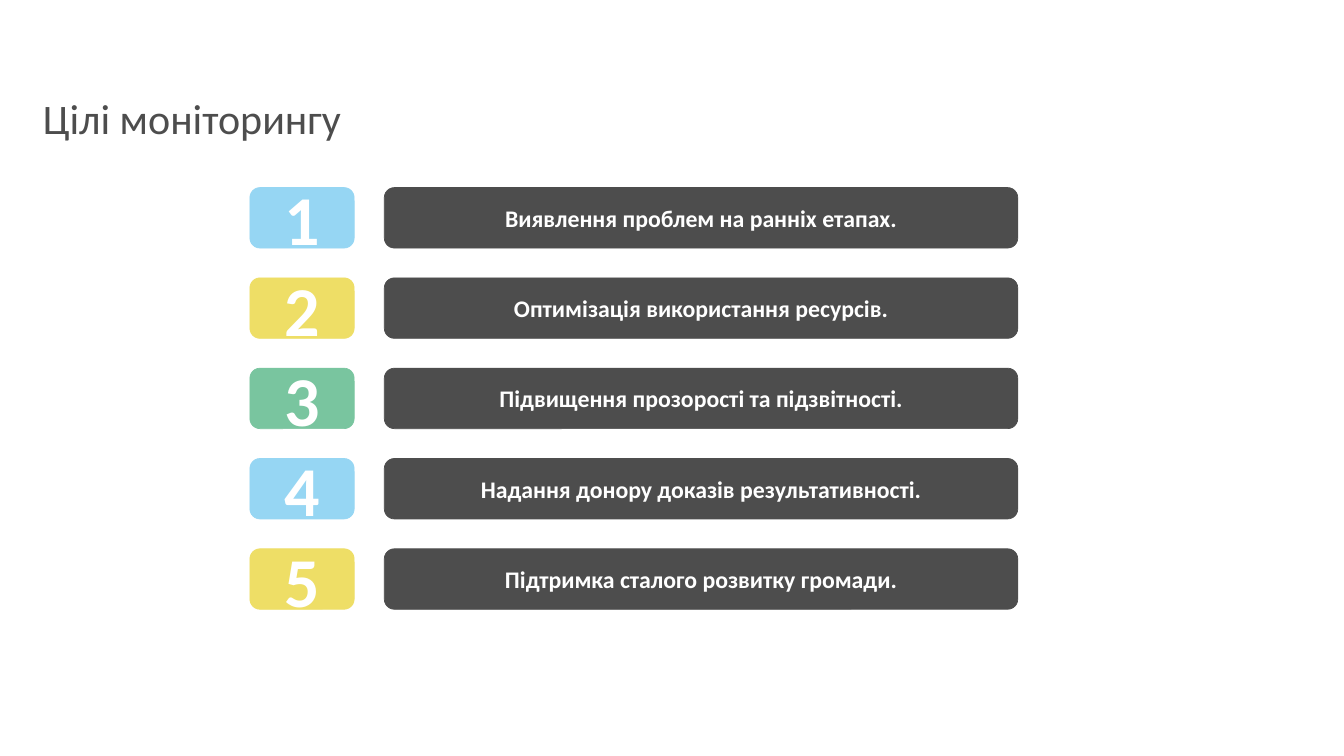
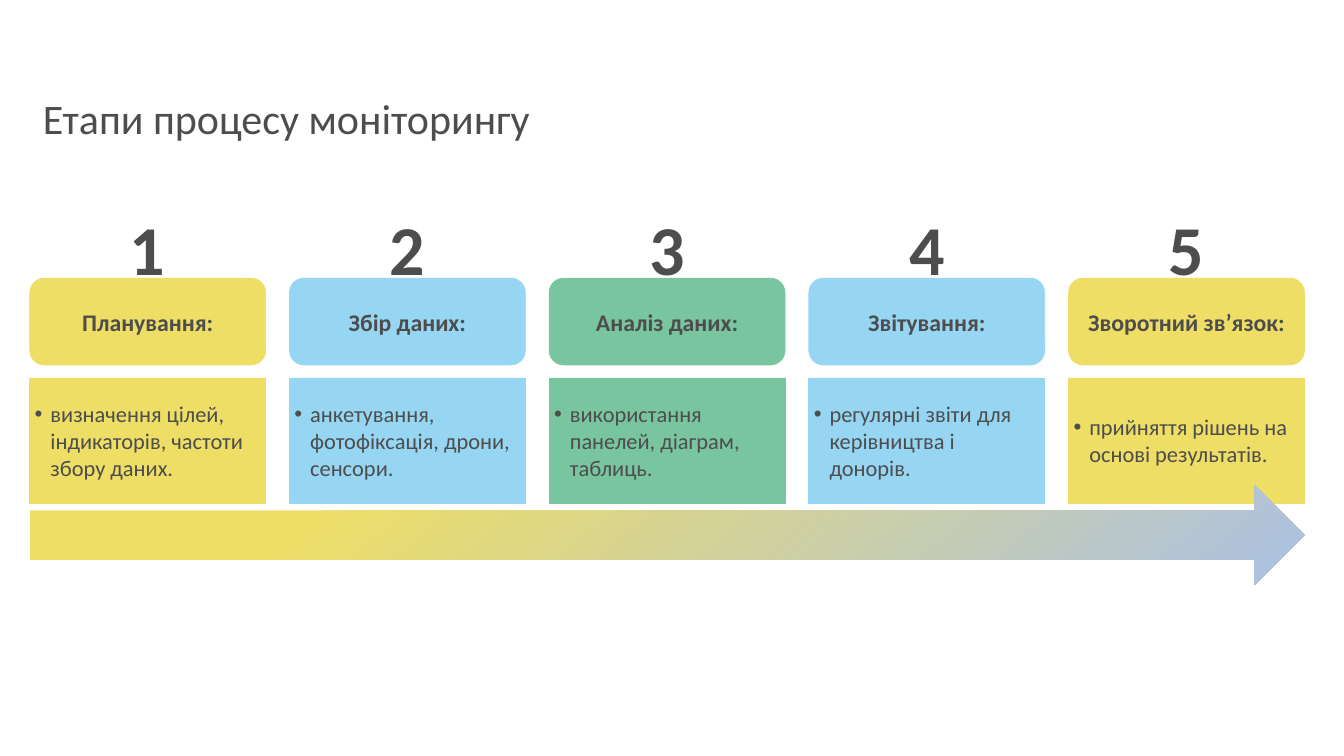
from pptx import Presentation
from pptx.dml.color import RGBColor
from pptx.enum.shapes import MSO_SHAPE as SHAPE
from pptx.enum.text import MSO_ANCHOR as ANCHOR, PP_ALIGN as ALIGN
from pptx.oxml.ns import qn
from pptx.util import Pt
from lxml.etree import SubElement

FONT = "Calibri"
DARK, WHITE = "4D4D4D", "FFFFFF"
BLUE, YELLOW, GREEN, LILAC = "96D6F3", "EEDE66", "79C59F", "ABC0E4"
SLIDE_W, SLIDE_H = 1920, 1080
BADGE_W, BADGE_H = 149, 86.4
BULLET_INDENT = 22.5

GOALS = [
    ("Виявлення проблем на ранніх етапах.", BLUE),
    ("Оптимізація використання ресурсів.", YELLOW),
    ("Підвищення прозорості та підзвітності.", GREEN),
    ("Надання донору доказів результативності.", BLUE),
    ("Підтримка сталого розвитку громади.", YELLOW),
]
STAGES = [
    ("Планування:", "визначення цілей, індикаторів, частоти збору даних.", YELLOW),
    ("Збір даних:", "анкетування, фотофіксація, дрони, сенсори.", BLUE),
    ("Аналіз даних:", "використання панелей, діаграм, таблиць.", GREEN),
    ("Звітування:", "регулярні звіти для керівництва і донорів.", BLUE),
    ("Зворотний зв’язок:", "прийняття рішень на основі результатів.", YELLOW),
]


def rgb(value):
    return RGBColor.from_string(value)


def add_bullet(p):
    pPr = p._p.get_or_add_pPr()
    pPr.set("marL", str(Pt(BULLET_INDENT)))
    pPr.set("indent", str(-Pt(BULLET_INDENT)))
    SubElement(pPr, qn("a:buFont"), typeface="Arial")
    SubElement(pPr, qn("a:buChar"), char="•")


def write(sp, text, size=34, color=DARK, bold=False, align=ALIGN.CENTER,
          anchor=ANCHOR.MIDDLE, spacing=None, bullet=False):
    tf = sp.text_frame
    tf.word_wrap = True
    tf.vertical_anchor = anchor
    p = tf.paragraphs[0]
    p.alignment = align
    if spacing:
        p.line_spacing = spacing
    if bullet:
        add_bullet(p)
    r = p.add_run()
    r.text = text
    r.font.name, r.font.size, r.font.bold = FONT, Pt(size), bold
    r.font.color.rgb = rgb(color)


def add_box(s, kind, x, y, w, h, fill=None):
    sp = s.shapes.add_shape(kind, Pt(x), Pt(y), Pt(w), Pt(h))
    sp.shadow.inherit = False
    if fill:
        sp.fill.solid()
        sp.fill.fore_color.rgb = rgb(fill)
        sp.line.color.rgb = rgb(fill)
        sp.line.width = Pt(1)
    else:
        sp.fill.background()
        sp.line.fill.background()
    return sp


def add_titled_slide(prs, title):
    s = prs.slides.add_slide(prs.slide_layouts[6])
    sp = s.shapes.add_textbox(Pt(54), Pt(137), Pt(1098), Pt(65))
    write(sp, title, size=60, align=ALIGN.LEFT, anchor=ANCHOR.TOP, spacing=0.9)
    return s


def add_badge(s, x, y, number, color, fill=None):
    sp = add_box(s, SHAPE.ROUNDED_RECTANGLE, x, y, BADGE_W, BADGE_H, fill)
    write(sp, str(number), size=100, color=color, bold=True)


def add_goal(s, x, y, w, number, text, fill):
    bar_offset = BADGE_W + 43
    add_badge(s, x, y, number, WHITE, fill)
    bar = add_box(s, SHAPE.ROUNDED_RECTANGLE, x + bar_offset, y,
                  w - bar_offset, BADGE_H, DARK)
    write(bar, text, color=WHITE, bold=True)


def add_stage(s, x, y, w, number, heading, text, fill):
    head_y = y + BADGE_H
    head = add_box(s, SHAPE.ROUNDED_RECTANGLE, x, head_y, w, 124, fill)
    write(head, heading, bold=True)
    body = add_box(s, SHAPE.RECTANGLE, x, head_y + 142.5, w, 178.5, fill)
    write(body, text, size=32, align=ALIGN.LEFT, bullet=True)
    add_badge(s, x + (w - BADGE_W) / 2, y, number, DARK)


def add_timeline_arrow(s, x, y, w, h):
    sp = add_box(s, SHAPE.RIGHT_ARROW, x, y, w, h)
    sp.fill.gradient()
    sp.fill.gradient_angle = 310
    for stop, (position, color) in zip(sp.fill.gradient_stops,
                                       [(0.22, YELLOW), (1, LILAC)]):
        stop.position = position
        stop.color.rgb = rgb(color)


def build_goals(prs, x=357, y=268, w=1097, pitch=129):
    s = add_titled_slide(prs, "Цілі моніторингу")
    for i, (text, fill) in enumerate(GOALS):
        add_goal(s, x, y + i * pitch, w, i + 1, text, fill)


def build_stages(prs, x=42.5, y=311, w=1821, stage_w=337):
    s = add_titled_slide(prs, "Етапи процесу моніторингу")
    pitch = (w - stage_w) / (len(STAGES) - 1)
    for i, (heading, text, fill) in enumerate(STAGES):
        add_stage(s, x + i * pitch, y, stage_w, i + 1, heading, text, fill)
    add_timeline_arrow(s, x, y + 382.5, w, 142)


def main():
    prs = Presentation()
    prs.slide_width, prs.slide_height = Pt(SLIDE_W), Pt(SLIDE_H)
    build_goals(prs)
    build_stages(prs)
    prs.save("out.pptx")


if __name__ == "__main__":
    main()
